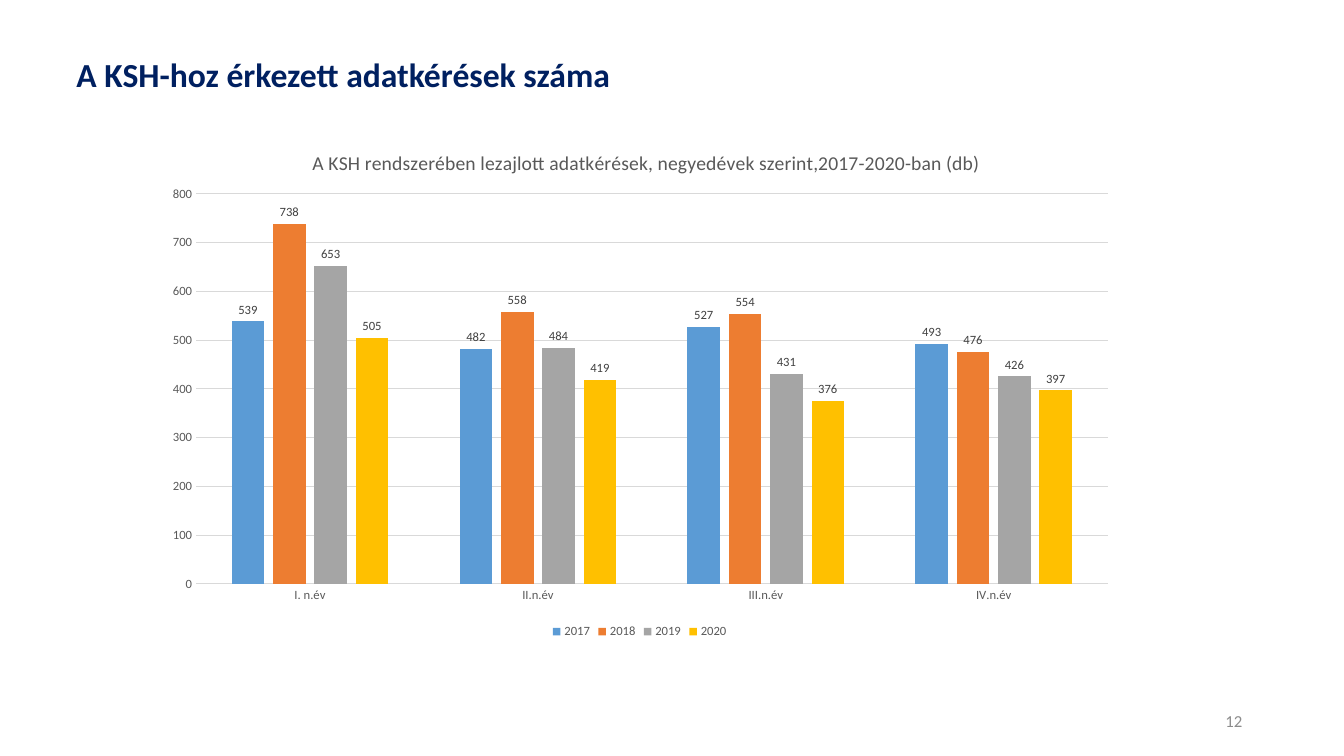
from lxml.etree import SubElement
from pptx import Presentation
from pptx.chart.data import CategoryChartData
from pptx.dml.color import RGBColor
from pptx.enum.chart import XL_CHART_TYPE, XL_LABEL_POSITION, XL_LEGEND_POSITION, XL_TICK_MARK
from pptx.enum.text import MSO_ANCHOR, PP_ALIGN
from pptx.oxml.ns import qn
from pptx.util import Pt

PX = 9144  # 100 px to the inch
FONT = "Calibri"
COLORS = {
    "title": "002060",
    "number": "8C8C8C",
    "text": "595959",
    "label": "404040",
    "line": "D9D9D9",
}
QUARTERS = ["I. n.év", "II.n.év", "III.n.év", "IV.n.év"]
REQUESTS = {
    "2017": ([539, 482, 527, 493], "5B9BD5"),
    "2018": ([738, 558, 554, 476], "ED7D31"),
    "2019": ([653, 484, 431, 426], "A5A5A5"),
    "2020": ([505, 419, 376, 397], "FFC000"),
}


def scaled(box):
    return [n * PX for n in box]


def style_font(font, size, color, bold=False):
    font.name = FONT
    font.size = Pt(size)
    font.bold = bold
    font.color.rgb = RGBColor.from_string(COLORS[color])


def style_line(line):
    line.color.rgb = RGBColor.from_string(COLORS["line"])
    line.width = Pt(0.75)


def add_text(s, box, text, size, color, bold=False, align=PP_ALIGN.LEFT, spacing=1.0):
    tf = s.shapes.add_textbox(*scaled(box)).text_frame
    tf.word_wrap = True
    tf.vertical_anchor = MSO_ANCHOR.MIDDLE
    p = tf.paragraphs[0]
    p.text = text
    p.alignment = align
    p.line_spacing = spacing
    style_font(p.runs[0].font, size, color, bold)


def set_layout(parent, after, **fractions):
    """Place a chart part by fractions of the chart's width and height."""
    for old in parent.findall(qn("c:layout")):
        parent.remove(old)
    layout = SubElement(parent, qn("c:layout"))
    manual = SubElement(layout, qn("c:manualLayout"))
    if "w" in fractions:
        SubElement(manual, qn("c:layoutTarget")).set("val", "inner")
    for axis in "xy":
        SubElement(manual, qn(f"c:{axis}Mode")).set("val", "edge")
    for name, value in fractions.items():
        SubElement(manual, qn(f"c:{name}")).set("val", str(value))
    if after is None:
        parent.insert(0, layout)
    else:
        after.addnext(layout)


def add_requests_chart(s, box):
    data = CategoryChartData()
    data.categories = QUARTERS
    for year, (values, _) in REQUESTS.items():
        data.add_series(year, values)
    chart = s.shapes.add_chart(XL_CHART_TYPE.COLUMN_CLUSTERED, *scaled(box), data).chart
    chart.font.name = FONT
    chart.font.size = Pt(10)

    chart.has_title = True
    title = chart.chart_title
    title.include_in_layout = False
    p = title.text_frame.paragraphs[0]
    p.text = "A KSH rendszerében lezajlott adatkérések, negyedévek szerint,2017-2020-ban (db)"
    style_font(p.runs[0].font, 14, "text")
    title_xml = chart.element.find(".//" + qn("c:title"))
    set_layout(title_xml, title_xml.find(qn("c:tx")), x=0.16, y=0.04)
    set_layout(chart.element.find(".//" + qn("c:plotArea")), None, x=0.044, y=0.133, w=0.937, h=0.753)

    chart.has_legend = True
    chart.legend.position = XL_LEGEND_POSITION.BOTTOM
    chart.legend.include_in_layout = False
    style_font(chart.legend.font, 9, "text")

    for axis in (chart.category_axis, chart.value_axis):
        axis.major_tick_mark = axis.minor_tick_mark = XL_TICK_MARK.NONE
        style_font(axis.tick_labels.font, 9, "text")
    style_line(chart.category_axis.format.line)
    value_axis = chart.value_axis
    value_axis.format.line.fill.background()
    value_axis.minimum_scale, value_axis.maximum_scale, value_axis.major_unit = 0, 800, 100
    style_line(value_axis.major_gridlines.format.line)

    plot = chart.plots[0]
    plot.gap_width = 219
    plot.overlap = -27
    plot.vary_by_categories = False
    for series, (_, color) in zip(plot.series, REQUESTS.values()):
        series.format.fill.solid()
        series.format.fill.fore_color.rgb = RGBColor.from_string(color)
        labels = series.data_labels
        labels.show_value = True
        labels.position = XL_LABEL_POSITION.OUTSIDE_END
        style_font(labels.font, 9, "label")


def main():
    prs = Presentation()
    prs.slide_width, prs.slide_height = scaled((1333, 750))
    s = prs.slides.add_slide(prs.slide_layouts[6])
    add_text(s, (942, 695, 300, 40), "12", 12, "number", align=PP_ALIGN.RIGHT)
    add_text(s, (66, 20, 1150, 111), "A KSH-hoz érkezett adatkérések száma", 24, "title",
             bold=True, spacing=0.9)
    add_requests_chart(s, (152, 124, 965, 514))
    prs.save("out.pptx")


if __name__ == "__main__":
    main()
